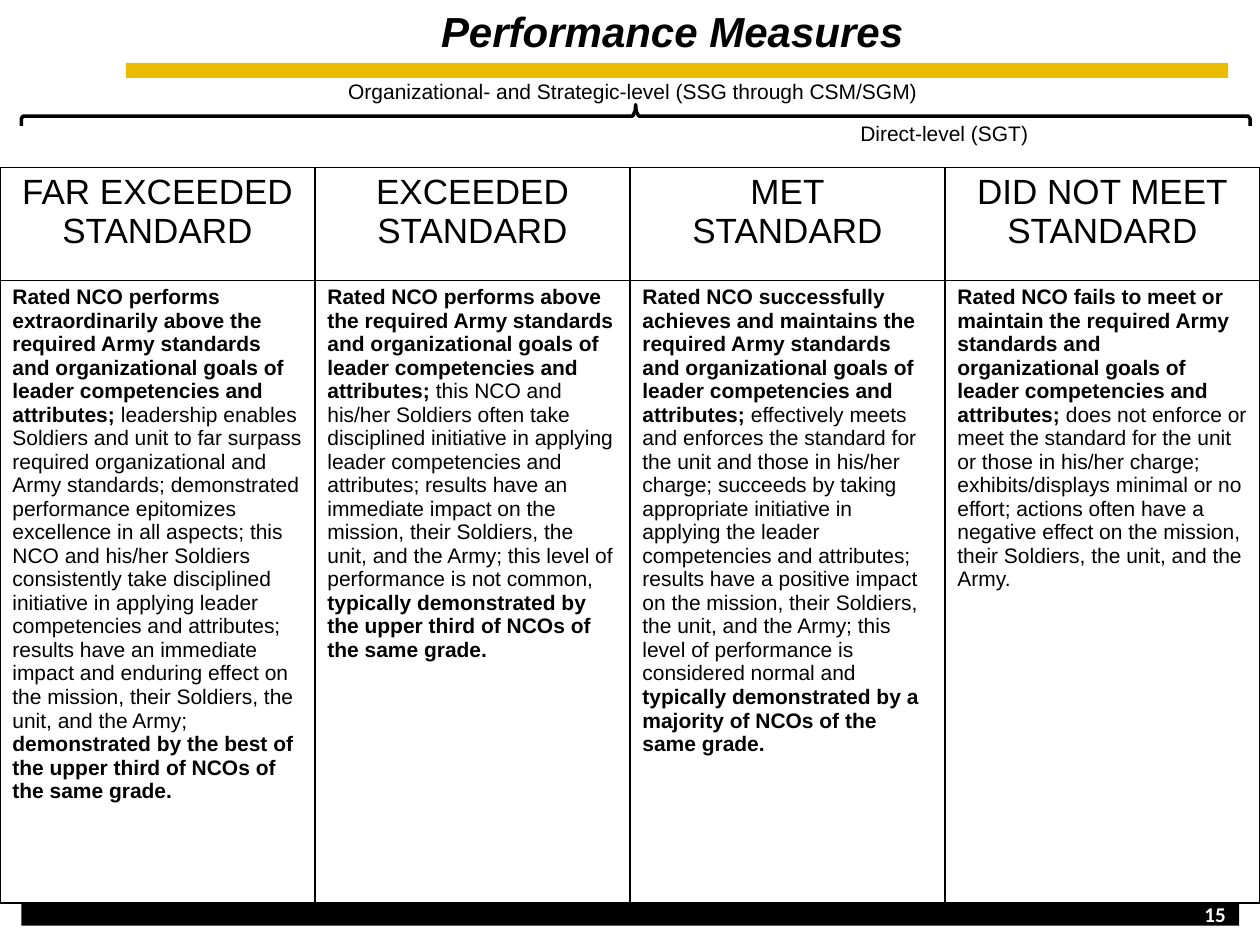
from dataclasses import dataclass

from lxml import etree
from pptx import Presentation
from pptx.dml.color import RGBColor
from pptx.enum.shapes import MSO_SHAPE
from pptx.enum.text import MSO_ANCHOR, MSO_AUTO_SIZE, PP_ALIGN
from pptx.oxml.ns import qn
from pptx.util import Cm, Pt

LEFT, CENTER, RIGHT = PP_ALIGN.LEFT, PP_ALIGN.CENTER, PP_ALIGN.RIGHT
TOP = MSO_ANCHOR.TOP
NO_AUTOFIT = MSO_AUTO_SIZE.NONE
RECTANGLE = MSO_SHAPE.RECTANGLE


@dataclass(frozen=True)
class Theme:
    font: str = "Arial"
    number_font: str = "Calibri"
    ink: str = "000000"
    paper: str = "FFFFFF"
    gold: str = "EABC00"
    title: float = 24
    heading: float = 20
    body: float = 12


THEME = Theme()

# Each rating: heading lines, bold definition, plain detail, bold closing
RATINGS = [
    (("FAR EXCEEDED", "STANDARD"),
     "Rated NCO performs extraordinarily above the required Army standards and "
     "organizational goals of leader competencies and attributes; ",
     "leadership enables Soldiers and unit to far surpass required organizational and "
     "Army standards; demonstrated performance epitomizes excellence in all aspects; "
     "this NCO and his/her Soldiers consistently take disciplined initiative in applying "
     "leader competencies and attributes; results have an immediate impact and enduring "
     "effect on the mission, their Soldiers, the unit, and the Army; ",
     "demonstrated by the best of the upper third of NCOs of the same grade."),
    (("EXCEEDED", "STANDARD"),
     "Rated NCO performs above the required Army standards and organizational goals of "
     "leader competencies and attributes; ",
     "this NCO and his/her Soldiers often take disciplined initiative in applying leader "
     "competencies and attributes; results have an immediate impact on the mission, their "
     "Soldiers, the unit, and the Army; this level of performance is not common, ",
     "typically demonstrated by the upper third of NCOs of the same grade."),
    (("MET", "STANDARD"),
     "Rated NCO successfully achieves and maintains the required Army standards and "
     "organizational goals of leader competencies and attributes; ",
     "effectively meets and enforces the standard for the unit and those in his/her "
     "charge; succeeds by taking appropriate initiative in applying the leader "
     "competencies and attributes; results have a positive impact on the mission, their "
     "Soldiers, the unit, and the Army; this level of performance is considered normal and ",
     "typically demonstrated by a majority of NCOs of the same grade."),
    (("DID NOT MEET", "STANDARD"),
     "Rated NCO fails to meet or maintain the required Army standards and organizational "
     "goals of leader competencies and attributes; ",
     "does not enforce or meet the standard for the unit or those in his/her charge; "
     "exhibits/displays minimal or no effort; actions often have a negative effect on the "
     "mission, their Soldiers, the unit, and the Army.",
     ""),
]


def add_run(p, text, size=THEME.body, font=THEME.font, color=THEME.ink,
            bold=False, italic=False):
    r = p.add_run()
    r.text = text
    r.font.size, r.font.name = Pt(size), font
    r.font.bold, r.font.italic = bold, italic
    r.font.color.rgb = RGBColor.from_string(color)


class SlideBuilder:
    def __init__(self, prs, theme):
        self.theme = theme
        self.s = prs.slides.add_slide(prs.slide_layouts[5])

    def frame(self, sp, left=0, top=0):
        """Prepare a text frame with the given insets in cm."""
        tf = sp.text_frame
        tf.word_wrap, tf.auto_size, tf.vertical_anchor = True, NO_AUTOFIT, TOP
        tf.margin_left, tf.margin_top = Cm(left), Cm(top)
        tf.margin_right = tf.margin_bottom = 0
        return tf

    def title(self, text, x, y, w, h, indent):
        sp = self.s.shapes.title
        sp.left, sp.top, sp.width, sp.height = Cm(x), Cm(y), Cm(w), Cm(h)
        p = self.frame(sp, left=indent, top=0.03).paragraphs[0]
        p.alignment = LEFT
        add_run(p, text, size=self.theme.title, bold=True, italic=True)

    def bar(self, x, y, w, h, color):
        sp = self.s.shapes.add_shape(RECTANGLE, Cm(x), Cm(y), Cm(w), Cm(h))
        sp.shadow.inherit = False
        sp.fill.solid()
        sp.fill.fore_color.rgb = RGBColor.from_string(color)
        sp.line.fill.background()

    def text(self, x, y, w, h, left=0, top=0):
        sp = self.s.shapes.add_textbox(Cm(x), Cm(y), Cm(w), Cm(h))
        return self.frame(sp, left, top)

    def brace(self, left, right, top, middle, bottom):
        """Draw an upward brace: one half and its mirror."""
        center = (left + right) / 2
        half = [(left, bottom), (left, bottom - 0.15), (left + 0.04, middle),
                (center - 0.06, middle), (center - 0.01, middle - 0.1)]
        mirrored = [(left + right - x, y) for x, y in reversed(half)]
        points = [(Cm(x), Cm(y)) for x, y in half + [(center, top)] + mirrored]
        builder = self.s.shapes.build_freeform(*points[0])
        builder.add_line_segments(points[1:], close=False)
        sp = builder.convert_to_shape()
        sp.shadow.inherit = False
        sp.fill.background()
        sp.line.color.rgb = RGBColor.from_string(self.theme.ink)
        sp.line.width = Pt(2)

    def style_cell(self, cell):
        tc_pr = cell._tc.get_or_add_tcPr()
        for side in ("a:lnL", "a:lnR", "a:lnT", "a:lnB"):
            ln = etree.SubElement(tc_pr, qn(side), w=str(Pt(1)))
            fill = etree.SubElement(ln, qn("a:solidFill"))
            etree.SubElement(fill, qn("a:srgbClr"), val=self.theme.ink)
        cell.fill.background()
        cell.margin_left = cell.margin_right = Cm(0.25)
        cell.margin_top, cell.margin_bottom = Cm(0.1), 0
        cell.vertical_anchor = TOP

    def ratings_table(self, ratings, x, y, w, row_heights):
        table = self.s.shapes.add_table(
            len(row_heights), len(ratings), Cm(x), Cm(y), Cm(w), Cm(sum(row_heights))).table
        table.first_row = table.horz_banding = False
        for row, height in zip(table.rows, row_heights):
            row.height = Cm(height)
        for cell in table.iter_cells():
            self.style_cell(cell)
        for col, (heading, definition, detail, closing) in enumerate(ratings):
            tf = table.cell(0, col).text_frame
            for i, line in enumerate(heading):
                p = tf.add_paragraph() if i else tf.paragraphs[0]
                p.alignment = CENTER
                add_run(p, line, size=self.theme.heading)
            p = table.cell(1, col).text_frame.paragraphs[0]
            for text, bold in ((definition, True), (detail, False), (closing, True)):
                if text:
                    add_run(p, text, bold=bold)


def main():
    prs = Presentation()
    prs.slide_width, prs.slide_height = Cm(25.4), Cm(19.05)
    b = SlideBuilder(prs, THEME)

    # Title, gold rule and footer bar
    b.title("Performance Measures", 2.74, 0.08, 20.75, 1.24, indent=6.15)
    b.bar(2.54, 1.27, 22.22, 0.3, THEME.gold)
    b.bar(0.43, 18.21, 24.55, 0.45, THEME.ink)

    # Rating definitions
    b.ratings_table(RATINGS, 0, 3.38, 25.4, (2.28, 12.54))

    # Levels and the brace over the columns
    b.brace(0.43, 25.2, top=2.11, middle=2.34, bottom=2.54)
    tf = b.text(6.99, 1.55, 13.74, 1.42, left=0.03, top=0.03)
    add_run(tf.paragraphs[0], "Organizational- and Strategic-level (SSG through CSM/SGM)")
    p = tf.add_paragraph()
    p.alignment, p.space_before = RIGHT, Pt(9.6)
    add_run(p, "Direct-level (SGT)")

    # Page number
    p = b.text(24.18, 18.24, 0.69, 0.48, left=0.1).paragraphs[0]
    p.line_spacing = Pt(12.4)
    add_run(p, "15", font=THEME.number_font, color=THEME.paper, bold=True)

    prs.save("out.pptx")


if __name__ == "__main__":
    main()
